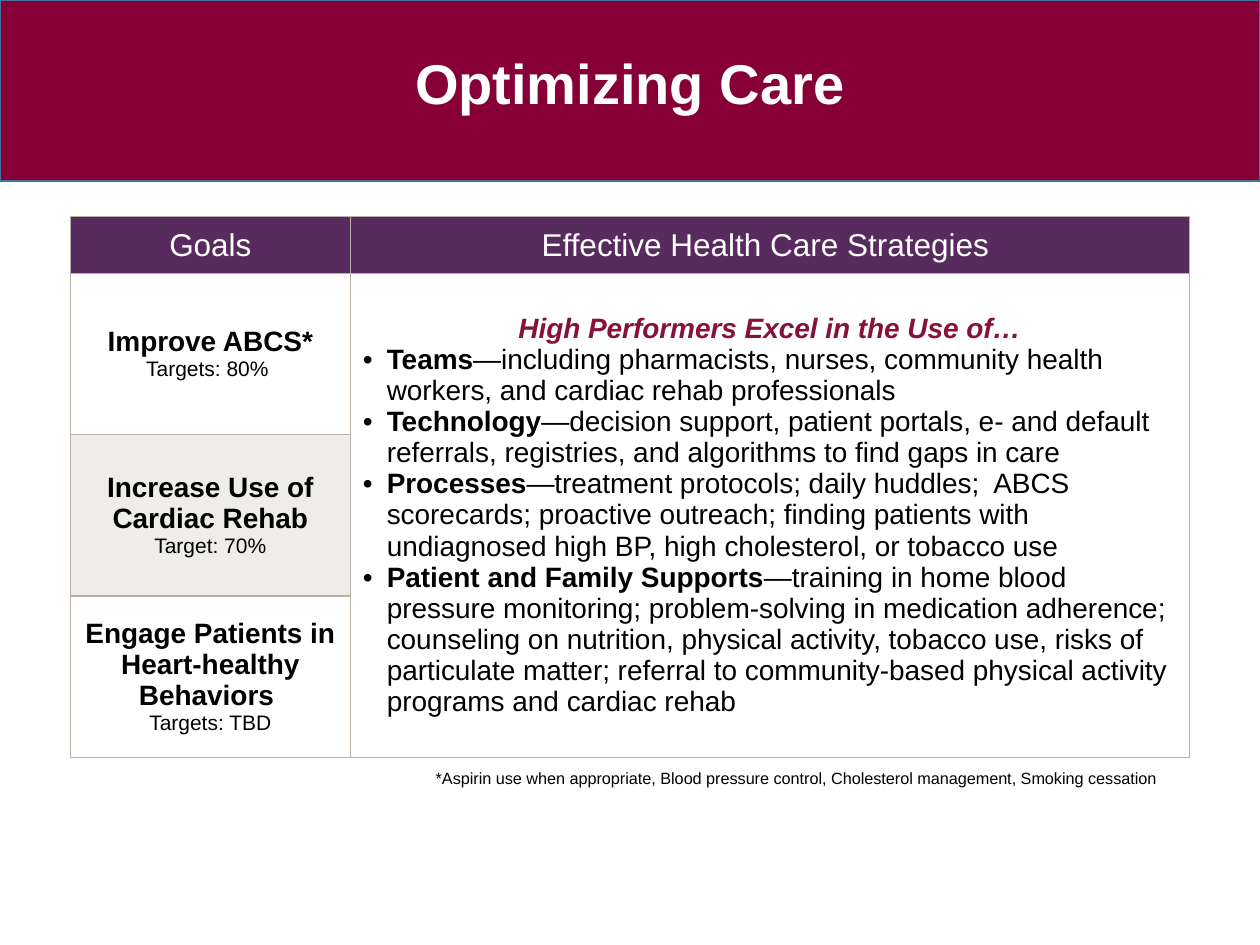
from pptx import Presentation
from pptx.dml.color import RGBColor
from pptx.enum.shapes import MSO_SHAPE
from pptx.enum.text import MSO_ANCHOR, PP_ALIGN
from pptx.oxml import parse_xml
from pptx.oxml.ns import nsdecls
from pptx.util import Inches, Pt

WINE = RGBColor(0x86, 0x00, 0x37)
BLUE = RGBColor(0x43, 0x73, 0x9E)
PLUM = RGBColor(0x58, 0x2B, 0x5E)
ROSE = RGBColor(0x87, 0x11, 0x37)
SAND = RGBColor(0xEF, 0xED, 0xE9)
TAN = RGBColor(0xBA, 0xB0, 0xA5)
WHITE = RGBColor(0xFF, 0xFF, 0xFF)
BLACK = RGBColor(0x00, 0x00, 0x00)


def write(frame, text, size=16, color=BLACK, bold=False, italic=False,
          align=PP_ALIGN.CENTER, lead="", bullet=False, space=None):
    """Add a paragraph, using the empty first one if there is one."""
    first = frame.paragraphs[0]
    para = frame.add_paragraph() if first.runs else first
    if bullet:
        props = para._p.get_or_add_pPr()
        props.set("marL", str(Inches(0.19)))
        props.set("indent", str(-Inches(0.19)))
        props.append(parse_xml(f'<a:buFont {nsdecls("a")} typeface="Arial"/>'))
        props.append(parse_xml(f'<a:buChar {nsdecls("a")} char="•"/>'))
    para.alignment = align
    if space:
        para.line_spacing = space
    for part, heavy in ((lead, True), (text, bold)):
        if part:
            run = para.add_run()
            run.text = part
            font = run.font
            font.name, font.size = "Arial", Pt(size)
            font.bold, font.italic = heavy, italic
            font.color.rgb = color


def style(cell, fill):
    """Give a cell its borders, fill and anchor."""
    props = cell._tc.get_or_add_tcPr()
    for side in ("lnL", "lnR", "lnT", "lnB"):
        props.append(parse_xml(
            f'<a:{side} {nsdecls("a")} w="{Pt(0.75)}"><a:solidFill>'
            f'<a:srgbClr val="{TAN}"/></a:solidFill></a:{side}>'))
    cell.fill.solid()
    cell.fill.fore_color.rgb = fill
    cell.vertical_anchor = MSO_ANCHOR.MIDDLE


deck = Presentation()
deck.slide_width, deck.slide_height = Inches(10), Inches(7.5)
slide = deck.slides.add_slide(deck.slide_layouts[6])
shapes = slide.shapes

# Title band
band = shapes.add_shape(MSO_SHAPE.RECTANGLE, 0, 0, Inches(10), Inches(1.44))
band.shadow.inherit = False
band.fill.solid()
band.fill.fore_color.rgb = WINE
band.line.color.rgb = BLUE
band.line.width = Pt(1)

# Title and footnote
title = shapes.add_textbox(Inches(0.69), Inches(0.4), Inches(8.62), Inches(1.04))
title.text_frame.word_wrap = True
write(title.text_frame, "Optimizing Care", size=32, color=WHITE, bold=True, space=0.9)

note = shapes.add_textbox(Inches(3.36), Inches(6.09), Inches(6.21), Inches(0.22))
note.text_frame.word_wrap = True
write(note.text_frame,
      "*Aspirin use when appropriate, Blood pressure control, "
      "Cholesterol management, Smoking cessation",
      size=9.3, align=PP_ALIGN.LEFT, space=0.7)

# Table grid
table = shapes.add_table(4, 2, Inches(0.56), Inches(1.72),
                         Inches(8.88), Inches(4.29)).table
for col, width in zip(table.columns, (2.22, 6.66)):
    col.width = Inches(width)
for row, height in zip(table.rows, (0.45, 1.28, 1.28, 1.28)):
    row.height = Inches(height)
for row, fill in enumerate((PLUM, WHITE, SAND, WHITE)):
    style(table.cell(row, 0), fill)
    style(table.cell(row, 1), PLUM if row == 0 else WHITE)
table.cell(1, 1).merge(table.cell(3, 1))

# Header row
for col, head in enumerate(("Goals", "Effective Health Care Strategies ")):
    write(table.cell(0, col).text_frame, head, size=18, color=WHITE)

# Goals
goals = [
    ("Improve ABCS*", "Targets: 80% "),
    ("Increase Use of Cardiac Rehab", "Target: 70%"),
    ("Engage Patients in Heart-healthy Behaviors ", "Targets: TBD"),
]
for row, (goal, target) in enumerate(goals, 1):
    frame = table.cell(row, 0).text_frame
    write(frame, goal, bold=True)
    write(frame, target, size=12)

# Strategies
plans = [
    ("Teams", "—including pharmacists, nurses, community health workers, "
     "and cardiac rehab professionals"),
    ("Technology", "—decision support, patient portals, e- and default "
     "referrals, registries, and algorithms to find gaps in care"),
    ("Processes", "—treatment protocols; daily huddles;  ABCS scorecards; "
     "proactive outreach; finding patients with undiagnosed high BP, "
     "high cholesterol, or tobacco use"),
    ("Patient and Family Supports", "—training in home blood pressure "
     "monitoring; problem-solving in medication adherence; counseling on "
     "nutrition, physical activity, tobacco use, risks of particulate matter; "
     "referral to community-based physical activity programs and cardiac rehab"),
]
frame = table.cell(1, 1).text_frame
write(frame, "High Performers Excel in the Use of…", color=ROSE, bold=True, italic=True)
for lead, text in plans:
    write(frame, text, lead=lead, bullet=True, align=PP_ALIGN.LEFT)

deck.save("out.pptx")
